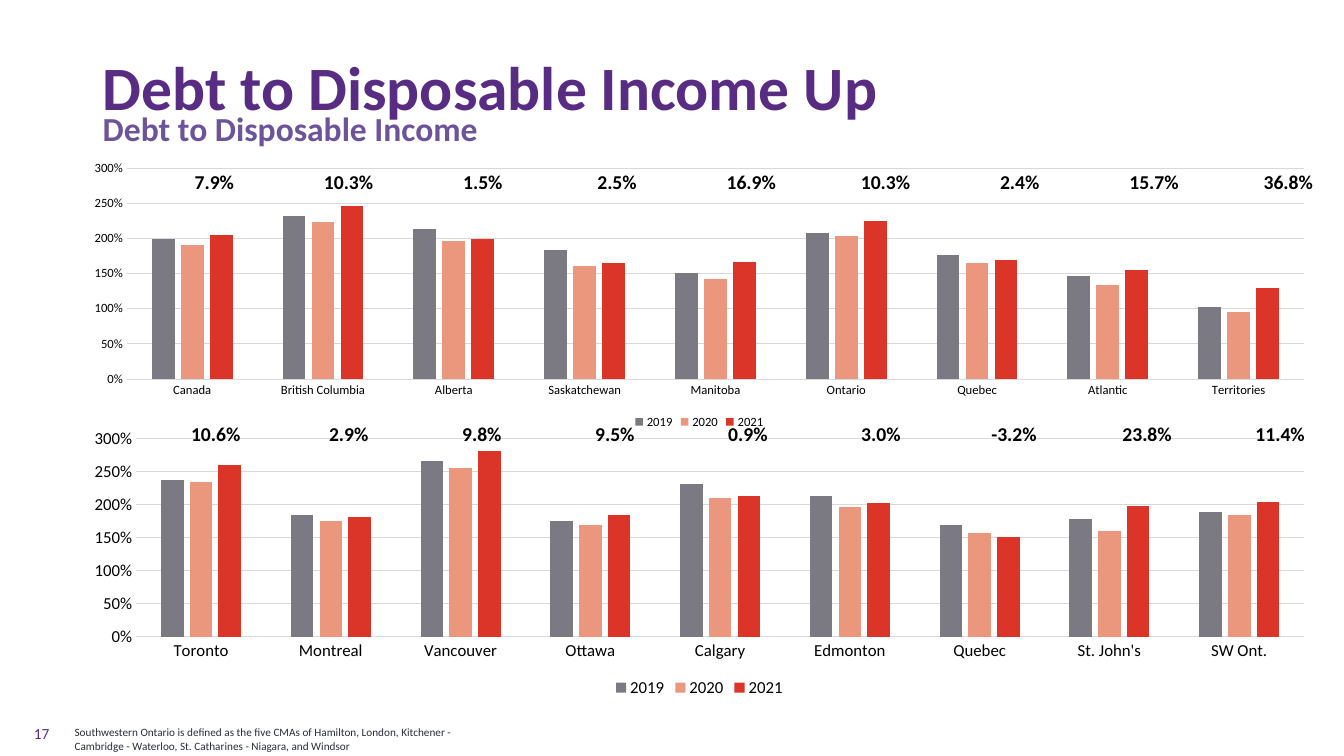
"""Build the debt to disposable income slide with two charts and their change rows."""
from dataclasses import dataclass

from pptx import Presentation
from pptx.chart.data import CategoryChartData
from pptx.dml.color import RGBColor
from pptx.enum.chart import XL_CHART_TYPE, XL_LEGEND_POSITION, XL_TICK_MARK
from pptx.enum.text import MSO_ANCHOR, MSO_AUTO_SIZE, PP_ALIGN
from pptx.util import Cm, Pt

TITLE = "Debt to Disposable Income Up"
SUBTITLE = "Debt to Disposable Income"
FOOTNOTE = (
    "Southwestern Ontario is defined as the five CMAs of Hamilton, London, Kitchener - "
    "Cambridge - Waterloo, St. Catharines - Niagara, and Windsor"
)
SLIDE_NUMBER = "17"

PANELS = [
    {
        "categories": ["Canada", "British Columbia", "Alberta", "Saskatchewan", "Manitoba",
                       "Ontario", "Quebec", "Atlantic", "Territories"],
        "series": {
            "2019": [1.99, 2.32, 2.14, 1.84, 1.51, 2.08, 1.76, 1.47, 1.02],
            "2020": [1.9, 2.23, 1.96, 1.61, 1.42, 2.04, 1.65, 1.34, 0.95],
            "2021": [2.05, 2.46, 1.99, 1.65, 1.66, 2.25, 1.69, 1.55, 1.3],
        },
        "changes": ["7.9%", "10.3%", "1.5%", "2.5%", "16.9%", "10.3%", "2.4%", "15.7%", "36.8%"],
        "chart_box": (1.75, 3.91, 31.75, 7.01),
        "table_box": (3.71, 4.19, 30.45, 1.03),
        "size": 9,
    },
    {
        "categories": ["Toronto", "Montreal", "Vancouver", "Ottawa", "Calgary",
                       "Edmonton", "Quebec", "St. John's", "SW Ont."],
        "series": {
            "2019": [2.38, 1.85, 2.66, 1.75, 2.32, 2.14, 1.69, 1.79, 1.89],
            "2020": [2.35, 1.76, 2.56, 1.69, 2.11, 1.97, 1.57, 1.6, 1.84],
            "2021": [2.6, 1.81, 2.81, 1.85, 2.13, 2.03, 1.52, 1.98, 2.05],
        },
        "changes": ["10.6%", "2.9%", "9.8%", "9.5%", "0.9%", "3.0%", "-3.2%", "23.8%", "11.4%"],
        "chart_box": (1.75, 10.67, 31.75, 7.01),
        "table_box": (3.76, 10.54, 30.18, 1.03),
        "size": 12,
    },
]


@dataclass(frozen=True)
class Theme:
    font: str = "Calibri"
    purple: str = "582C83"
    lilac: str = "6D549A"
    slate: str = "282F39"
    black: str = "000000"
    grid: str = "D9D9D9"
    bars: tuple = ("7B7981", "EA977D", "DB352A")
    title_size: int = 44
    subtitle_size: int = 24
    change_size: int = 14
    number_size: int = 11
    footnote_size: int = 8
    plain_table: str = "{2D5ABB26-0587-4C30-8999-92F81FD0307C}"


THEME = Theme()


def lengths(box):
    """Turn a box in centimetres into slide lengths."""
    return [Cm(value) for value in box]


def style_font(font, size, color, bold=False):
    """Set typeface, size, colour and weight."""
    font.name, font.size, font.bold = THEME.font, Pt(size), bold
    font.color.rgb = RGBColor.from_string(color)


def write(frame, text, size, color, bold=False, align=PP_ALIGN.LEFT):
    """Write one formatted run into a text frame."""
    paragraph = frame.paragraphs[0]
    paragraph.alignment = align
    run = paragraph.add_run()
    run.text = text
    style_font(run.font, size, color, bold)
    return paragraph


def add_text(slide, box, text, size, color, bold=False, align=PP_ALIGN.LEFT,
             anchor=MSO_ANCHOR.TOP):
    """Add a wrapping text box."""
    frame = slide.shapes.add_textbox(*lengths(box)).text_frame
    frame.word_wrap = True
    frame.vertical_anchor = anchor
    write(frame, text, size, color, bold, align)


def add_title(slide):
    """Place the title placeholder and fill it."""
    title = slide.shapes.title
    title.left, title.top, title.width, title.height = lengths((2.34, 1.09, 30.45, 2.36))
    frame = title.text_frame
    frame.auto_size = MSO_AUTO_SIZE.NONE
    frame.vertical_anchor = MSO_ANCHOR.MIDDLE
    write(frame, TITLE, THEME.title_size, THEME.purple, True).line_spacing = 0.9


def style_line(line):
    """Give a chart line the grid look."""
    line.color.rgb = RGBColor.from_string(THEME.grid)
    line.width = Pt(0.75)


def add_panel_chart(slide, panel):
    """Add the clustered columns of one panel."""
    data = CategoryChartData(number_format="0%")
    data.categories = panel["categories"]
    for name, values in panel["series"].items():
        data.add_series(name, values)
    chart = slide.shapes.add_chart(
        XL_CHART_TYPE.COLUMN_CLUSTERED, *lengths(panel["chart_box"]), data).chart
    chart.has_title = False
    style_font(chart.font, panel["size"], THEME.black)

    chart.has_legend = True
    chart.legend.position = XL_LEGEND_POSITION.BOTTOM
    chart.legend.include_in_layout = False
    style_font(chart.legend.font, panel["size"], THEME.black)

    plot = chart.plots[0]
    plot.gap_width, plot.overlap, plot.vary_by_categories = 219, -27, False
    for series, color in zip(plot.series, THEME.bars):
        series.format.fill.solid()
        series.format.fill.fore_color.rgb = RGBColor.from_string(color)

    for axis in (chart.category_axis, chart.value_axis):
        axis.major_tick_mark = axis.minor_tick_mark = XL_TICK_MARK.NONE
        style_font(axis.tick_labels.font, panel["size"], THEME.black)
    style_line(chart.category_axis.format.line)
    values = chart.value_axis
    values.minimum_scale, values.maximum_scale, values.major_unit = 0, 3, 0.5
    values.tick_labels.number_format = "0%"
    values.tick_labels.number_format_is_linked = False
    values.format.line.fill.background()
    style_line(values.major_gridlines.format.line)


def add_change_row(slide, panel):
    """Add the unfilled row of changes above one chart."""
    changes = panel["changes"]
    table = slide.shapes.add_table(1, len(changes), *lengths(panel["table_box"])).table
    table.first_row = table.horz_banding = False
    table._tbl.tblPr.find("{*}tableStyleId").text = THEME.plain_table
    for cell, change in zip(table.iter_cells(), changes):
        cell.fill.background()
        write(cell.text_frame, change, THEME.change_size, THEME.black, True, PP_ALIGN.CENTER)


def main():
    """Assemble and save the slide."""
    presentation = Presentation()
    presentation.slide_width, presentation.slide_height = Cm(33.87), Cm(19.05)
    slide = presentation.slides.add_slide(presentation.slide_layouts[5])
    add_title(slide)
    add_text(slide, (2.34, 2.59, 21.44, 1.27), SUBTITLE, THEME.subtitle_size, THEME.lilac, True)
    add_text(slide, (1.63, 18.16, 11.07, 0.94), FOOTNOTE, THEME.footnote_size, THEME.slate)
    add_text(slide, (0, 17.96, 1.5, 1.02), SLIDE_NUMBER, THEME.number_size, THEME.purple,
             align=PP_ALIGN.RIGHT, anchor=MSO_ANCHOR.MIDDLE)
    for panel in PANELS:
        add_panel_chart(slide, panel)
        add_change_row(slide, panel)
    presentation.save("out.pptx")


if __name__ == "__main__":
    main()
